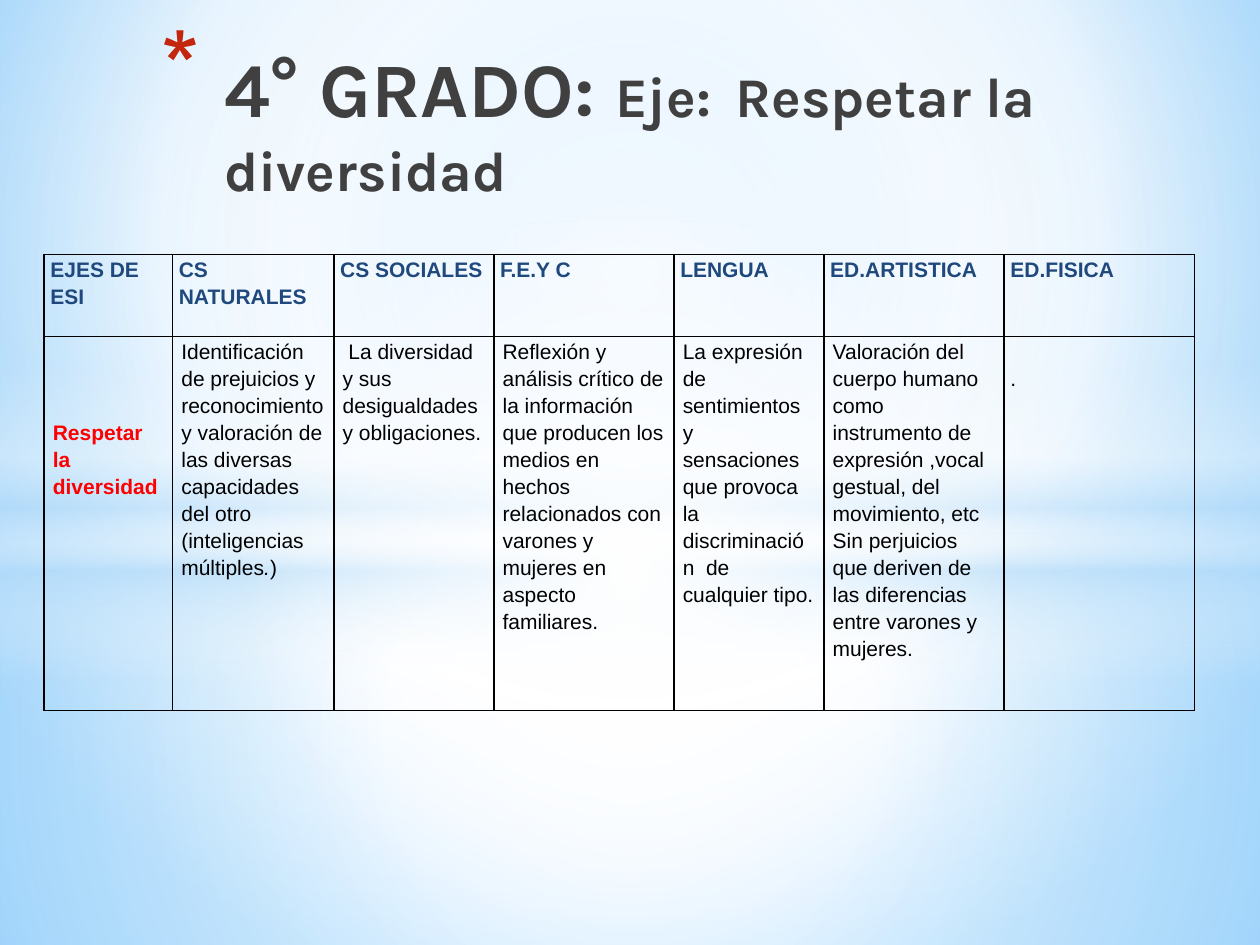
from dataclasses import dataclass

from lxml import etree
from pptx import Presentation
from pptx import util as u
from pptx.dml import color
from pptx.enum import shapes, text
from pptx.oxml import ns


@dataclass(frozen=True)
class Theme:
    title_font: str = "Karla"
    table_font: str = "Arial"
    title: str = "404040"
    bullet: str = "C3260C"
    header: str = "1F497D"
    topic: str = "FF0000"
    ink: str = "000000"
    white: str = "FFFFFF"
    mist: str = "B4DCFA"
    sky: str = "9ED5FF"
    deep_sky: str = "5BB9FF"
    title_size: int = 44
    subtitle_size: int = 32
    gap_size: int = 54
    table_size: int = 12


THEME = Theme()
CENTER = (50, 50, 50, 50)


@dataclass(frozen=True)
class Span:
    text: str
    size: int = THEME.table_size
    color: str = THEME.ink
    font: str = THEME.table_font
    bold: bool = False
    italic: bool = False


HEADERS = ["EJES DE ESI", "CS NATURALES", "CS SOCIALES", "F.E.Y C", "LENGUA",
           "ED.ARTISTICA", "ED.FISICA"]
TOPICS = [
    [[Span("Respetar la diversidad", color=THEME.topic, bold=True)]],
    [[Span("Identificación de prejuicios y reconocimiento y valoración de las "
           "diversas capacidades del otro (inteligencias múltiples"),
      Span(".", italic=True), Span(")")]],
    [[Span(" La diversidad y sus desigualdades y obligaciones.")]],
    [[Span("Reflexión y análisis crítico de la información que producen los medios "
           "en hechos relacionados con varones y mujeres en aspecto familiares.")]],
    [[Span("La expresión de sentimientos y sensaciones que provoca la "
           "discriminación  de cualquier tipo.")]],
    [[Span("Valoración del cuerpo humano como instrumento de expresión ,vocal "
           "gestual, del movimiento, etc")],
     [Span("Sin perjuicios que deriven de las diferencias entre varones y mujeres.")]],
    [[Span(".")]],
]
COLUMNS = [1.02, 1.28, 1.27, 1.43, 1.19, 1.43, 1.51]
ROWS = [0.65, 2.97]
LINE = 0.215
TOP_MARGINS = [3 * LINE, 0, 0, 0, 0, 0, LINE]
SIDE_MARGINS = [0.07] * 6 + [0.05]


def add(parent, tag, **attributes):
    node = etree.SubElement(parent, ns.qn(tag))
    for key, value in attributes.items():
        node.set(key, str(value))
    return node


def gradient(parent, stops, focus=None):
    fill = add(parent, "a:gradFill", rotWithShape=1)
    stop_list = add(fill, "a:gsLst")
    for position, value, opacity in stops:
        stop = add(stop_list, "a:gs", pos=position * 1000)
        add(add(stop, "a:srgbClr", val=value), "a:alpha", val=opacity * 1000)
    if focus:
        circle = add(fill, "a:path", path="circle")
        add(circle, "a:fillToRect", **{side: value * 1000 for side, value in zip("ltrb", focus)})
    else:
        add(fill, "a:lin", ang=90 * 60000, scaled=0)
    return fill


def write(para, spans):
    for span in spans:
        run = para.add_run()
        run.text = span.text
        run.font.name = span.font
        run.font.size = u.Pt(span.size)
        run.font.bold = span.bold
        run.font.italic = span.italic
        run.font.color.rgb = color.RGBColor.from_string(span.color)


def paint_background(page):
    properties = page.background.fill
    properties.solid()
    solid = page.element.find(".//" + ns.qn("p:bgPr"))
    solid.remove(solid[0])
    stops = [(0, THEME.sky, 100), (60, THEME.white, 100), (100, THEME.deep_sky, 100)]
    solid.insert(0, gradient(solid, stops, (20, 10, 20, 60)))


def add_glow(page, kind, box, stops, focus=None):
    shape = page.shapes.add_shape(kind, *map(u.Inches, box))
    shape.shadow.inherit = False
    shape.line.fill.background()
    properties = shape._element.spPr
    fill = gradient(properties, stops, focus)
    properties.find(ns.qn("a:prstGeom")).addnext(fill)


def add_backdrop(page):
    paint_background(page)
    rect, oval = shapes.MSO_SHAPE.RECTANGLE, shapes.MSO_SHAPE.OVAL
    white, mist = THEME.white, THEME.mist
    add_glow(page, rect, (0, 4.23, 10, 3.27),
             [(0, white, 91), (37, white, 76), (100, mist, 79)], CENTER)
    add_glow(page, rect, (0, 0, 10, 4.23),
             [(0, white, 89), (48, white, 62), (100, mist, 79)], CENTER)
    add_glow(page, rect, (0, 2.9, 10, 2.5),
             [(0, white, 0), (29, white, 30), (45, mist, 40), (55, white, 26),
              (65, mist, 60), (100, white, 0)])
    add_glow(page, oval, (0, 1.75, 10, 5.58), [(0, white, 100), (54, white, 0)], CENTER)


def add_title(page, box):
    frame = page.shapes.add_textbox(*map(u.Inches, box)).text_frame
    frame.word_wrap = True
    frame.vertical_anchor = text.MSO_ANCHOR.TOP
    para = frame.paragraphs[0]
    parts = [("4° GRADO: ", THEME.title_size), ("Eje:", THEME.subtitle_size),
             (" ", THEME.gap_size), ("Respetar la diversidad", THEME.subtitle_size)]
    write(para, [Span(words, size, THEME.title, THEME.title_font, True)
                 for words, size in parts])
    properties = para._p.get_or_add_pPr()
    properties.set("marL", str(u.Inches(0.7)))
    properties.set("indent", str(u.Inches(-0.5)))
    add(add(properties, "a:buClr"), "a:srgbClr", val=THEME.bullet)
    add(properties, "a:buSzPct", val=128000)
    add(properties, "a:buChar", char="*")


def fill_cell(cell, paragraphs, side, top=0):
    cell.margin_left = cell.margin_right = u.Inches(side)
    cell.margin_top, cell.margin_bottom = u.Inches(top), 0
    for index, spans in enumerate(paragraphs):
        frame = cell.text_frame
        para = frame.add_paragraph() if index else frame.paragraphs[0]
        para.line_spacing = 1.15
        write(para, spans)
    properties = cell._tc.get_or_add_tcPr()
    for edge in "LRTB":
        border = add(properties, f"a:ln{edge}", w=u.Pt(1))
        add(add(border, "a:solidFill"), "a:srgbClr", val=THEME.ink)
    cell.fill.background()


def add_topics(page, box):
    table = page.shapes.add_table(len(ROWS), len(COLUMNS), *map(u.Inches, box)).table
    table.first_row = table.horz_banding = False
    for row, height in zip(table.rows, ROWS):
        row.height = u.Inches(height)
    for index, width in enumerate(COLUMNS):
        table.columns[index].width = u.Inches(width)
        header = Span(HEADERS[index], color=THEME.header, bold=True)
        fill_cell(table.cell(0, index), [[header]], 0.05)
        fill_cell(table.cell(1, index), TOPICS[index], SIDE_MARGINS[index], TOP_MARGINS[index])


def main():
    deck = Presentation()
    deck.slide_width, deck.slide_height = u.Inches(10), u.Inches(7.5)
    page = deck.slides.add_slide(deck.slide_layouts[6])
    add_backdrop(page)
    add_title(page, (0.98, 0.13, 7.85, 1.34))
    add_topics(page, (0.35, 2.02, sum(COLUMNS), sum(ROWS)))
    deck.save("out.pptx")


if __name__ == "__main__":
    main()
